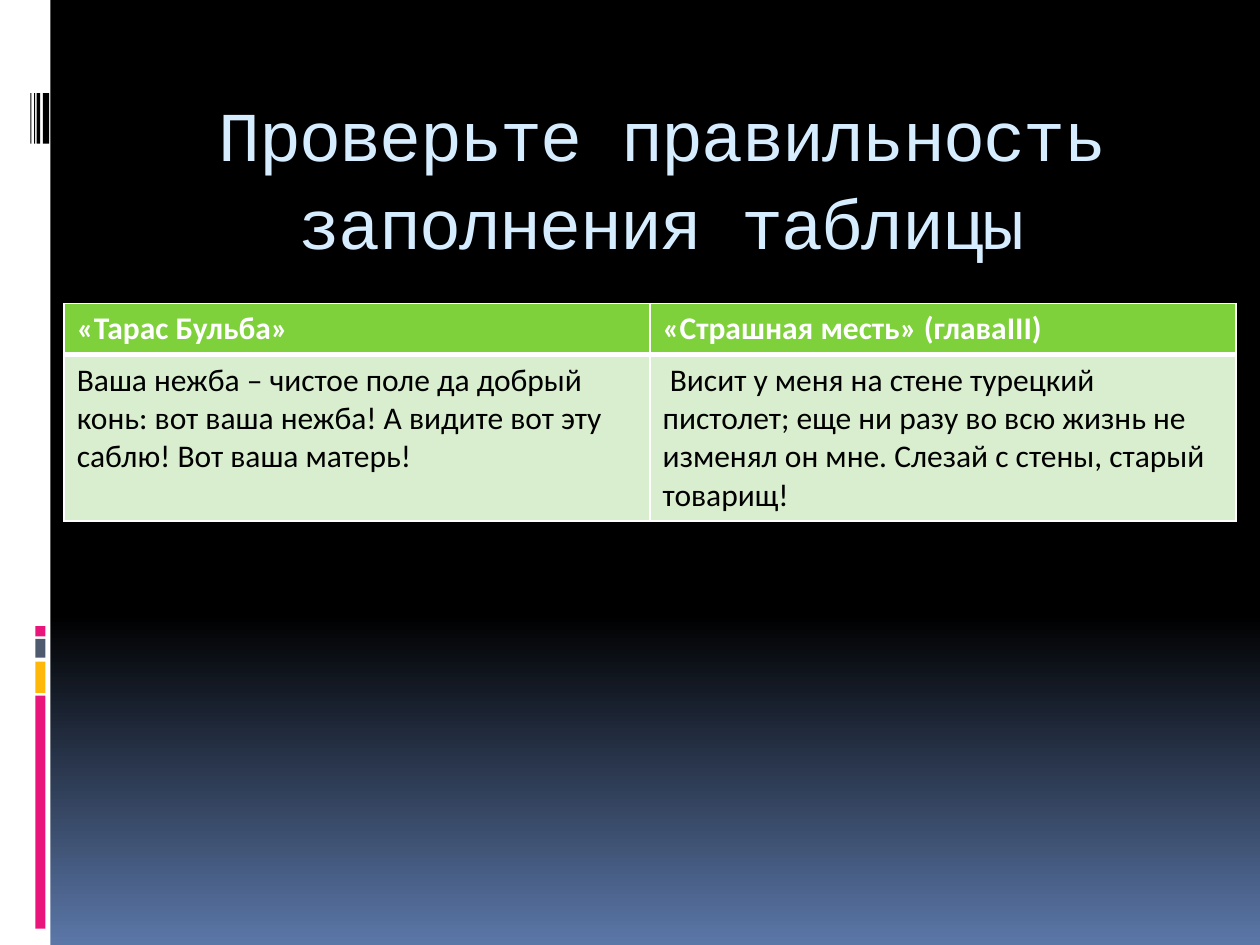
"""Build a slide with a two-column table comparing quotations."""
from pptx import Presentation
from pptx.dml.color import RGBColor
from pptx.enum.shapes import MSO_SHAPE
from pptx.enum.text import MSO_ANCHOR, PP_ALIGN
from pptx.oxml import parse_xml
from pptx.oxml.ns import nsdecls
from pptx.util import Inches, Pt

THEME = {
    "black": "000000", "white": "FFFFFF", "sky": "5B77A8", "pale": "D6ECFF",
    "pink": "EA157A", "amber": "FEB80A", "slate": "4E5B6F",
    "green": "7FD13B", "mint": "D8EECE",
    "title_font": "Courier New", "body_font": "Calibri",
    "title_size": 40, "body_size": 18,
}


def rgb(name):
    return RGBColor.from_string(THEME[name])


def write(tf, text, kind="body", color="black", bold=False, align=PP_ALIGN.LEFT, spacing=None):
    tf.word_wrap = True
    p = tf.paragraphs[0]
    p.alignment = align
    p.line_spacing = spacing
    r = p.add_run()
    r.text = text
    r.font.name = THEME[f"{kind}_font"]
    r.font.size = Pt(THEME[f"{kind}_size"])
    r.font.bold = bold
    r.font.color.rgb = rgb(color)
    return r


prs = Presentation()
prs.slide_width, prs.slide_height = Inches(10), Inches(7.5)
s = prs.slides.add_slide(prs.slide_layouts[5])

bg = s.background.fill
bg.gradient()
bg.gradient_angle = 270
for stop, (pos, color) in zip(bg.gradient_stops, [(0.65, "black"), (1, "sky")]):
    stop.position = pos
    stop.color.rgb = rgb(color)

bars = [(0, 0, 0.4, 7.5, "white")]
bars += [(0.28, y, 0.08, h, color) for y, h, color in [
    (5.52, 1.85, "pink"), (5.25, 0.25, "amber"), (5.07, 0.15, "slate"), (4.97, 0.08, "pink")]]
bars += [(x, 0.74, w, 0.4, "black") for x, w in [
    (0.34, 0.05), (0.29, 0.03), (0.27, 0.01), (0.24, 0.01)]]
for x, y, w, h, color in bars:
    sp = s.shapes.add_shape(MSO_SHAPE.RECTANGLE, Inches(x), Inches(y), Inches(w), Inches(h))
    sp.shadow.inherit = False
    sp.fill.solid()
    sp.fill.fore_color.rgb = rgb(color)
    sp.line.fill.background()

title = s.shapes.title
title.left, title.top, title.width, title.height = map(Inches, (1, 0.56, 8.5, 1))
tf = title.text_frame
tf.vertical_anchor = MSO_ANCHOR.TOP
tf.margin_top = Inches(0.13)
r = write(tf, "Проверьте правильность заполнения таблицы", kind="title", color="pale",
          align=PP_ALIGN.CENTER, spacing=1.05)
r.font._element.set("spc", "-100")

rows = [
    ("«Тарас Бульба»", "«Страшная месть» (главаIII)"),
    ("Ваша нежба – чистое поле да добрый конь: вот ваша нежба! А видите вот эту саблю! "
     "Вот ваша матерь!",
     " Висит у меня на стене турецкий пистолет; еще ни разу во всю жизнь не изменял он мне. "
     "Слезай с стены, старый товарищ!"),
]
styles = [("green", "white", True, 3), ("mint", "black", False, 1)]
table = s.shapes.add_table(2, 2, Inches(0.51), Inches(2.41), Inches(9.3), Inches(1.71)).table
for row, height in zip(table.rows, (0.4, 1.31)):
    row.height = Inches(height)
for i, (texts, (fill, color, bold, bottom)) in enumerate(zip(rows, styles)):
    for j, text in enumerate(texts):
        cell = table.cell(i, j)
        cell.fill.solid()
        cell.fill.fore_color.rgb = rgb(fill)
        write(cell.text_frame, text, color=color, bold=bold)
        top = 1 if i == 0 else styles[i - 1][3]
        for n, (side, width) in enumerate(zip("LRTB", (1, 1, top, bottom))):
            cell._tc.get_or_add_tcPr().insert(n, parse_xml(
                f'<a:ln{side} {nsdecls("a")} w="{Pt(width)}"><a:solidFill>'
                f'<a:srgbClr val="{THEME["white"]}"/></a:solidFill></a:ln{side}>'))

prs.save("out.pptx")
